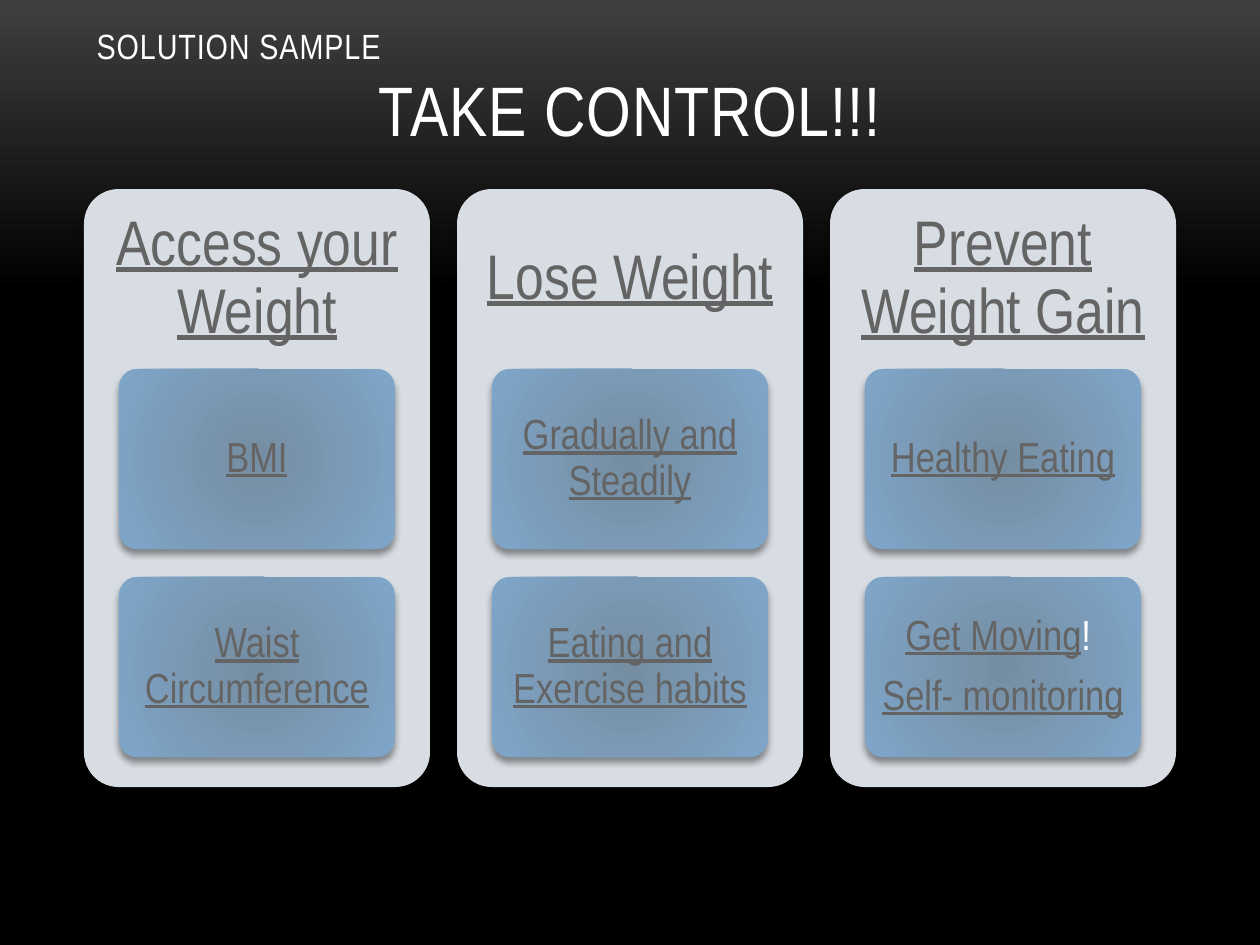
from lxml import etree
from pptx import Presentation
from pptx import util as u
from pptx.dml.color import RGBColor
from pptx.enum import shapes, text
from pptx.oxml import ns

PX = 914400 / 126
WHITE = RGBColor(0xFF, 0xFF, 0xFF)
BLACK = RGBColor(0, 0, 0)
CHARCOAL = RGBColor(0x3F, 0x3F, 0x3F)
GREY = RGBColor(0x64, 0x64, 0x64)
CARD = RGBColor(0xD8, 0xDD, 0xE3)
TILE_CENTRE = RGBColor(0x75, 0x8D, 0xA1)
TILE_EDGE = RGBColor(0x7F, 0xA6, 0xCA)
FONT = "Arial Narrow"
LINK = dict(name=FONT, underline=True)

COLUMNS = [
    ("Access your Weight", [["BMI"], ["Waist Circumference"]]),
    ("Lose Weight", [["Gradually and Steadily"], ["Eating and Exercise habits"]]),
    ("Prevent Weight Gain", [["Healthy Eating"], ["Get Moving", "Self- monitoring"]]),
]


def emu(*lengths):
    return [u.Emu(round(n * PX)) for n in lengths]


def apply(target, **values):
    for name, value in values.items():
        setattr(target, name, value)


def add_run(p, words, color, **font):
    r = p.add_run()
    r.text = words
    apply(r.font, **font)
    r.font.color.rgb = color
    return r


def set_gradient(fill, stops):
    fill.gradient()
    for stop, (position, color) in zip(fill.gradient_stops, stops):
        stop.position = position
        stop.color.rgb = color


def add_panel(s, x, y, w, h):
    sp = s.shapes.add_shape(shapes.MSO_SHAPE.ROUNDED_RECTANGLE, *emu(x, y, w, h))
    sp.adjustments[0] = 0.1
    sp.line.fill.background()
    sp.shadow.inherit = False
    effects = sp.element.spPr.find(ns.qn("a:effectLst"))
    shadow = etree.SubElement(effects, ns.qn("a:outerShdw"), blurRad="50800",
                              dist="43180", dir="5400000", rotWithShape="0")
    color = etree.SubElement(shadow, ns.qn("a:srgbClr"), val=str(BLACK))
    etree.SubElement(color, ns.qn("a:alpha"), val="40000")
    return sp


def write_centred(tf, lines, size, inset_x, inset_y):
    dx, dy = emu(inset_x, inset_y)
    apply(tf, word_wrap=True, vertical_anchor=text.MSO_ANCHOR.MIDDLE,
          margin_left=dx, margin_right=dx, margin_top=dy, margin_bottom=dy)
    for i, line in enumerate(lines):
        p = tf.add_paragraph() if i else tf.paragraphs[0]
        apply(p, alignment=text.PP_ALIGN.CENTER, line_spacing=0.9)
        if i:
            p.space_before = u.Pt(8.4)
        add_run(p, line, GREY, size=u.Pt(size), **LINK)


def add_tile(s, x, y, w, h, lines):
    sp = add_panel(s, x, y, w, h)
    set_gradient(sp.fill, [(0, TILE_CENTRE), (1, TILE_EDGE)])
    grad = sp.element.spPr.find(ns.qn("a:gradFill"))
    grad.remove(grad.find(ns.qn("a:lin")))
    circle = etree.SubElement(grad, ns.qn("a:path"), path="circle")
    etree.SubElement(circle, ns.qn("a:fillToRect"), {side: "100000" for side in "ltrb"})
    write_centred(sp.text_frame, lines, 24, 9, 6)
    return sp


def add_column(s, x, y, w, h, heading, tiles):
    sp = add_panel(s, x, y, w, h)
    sp.fill.solid()
    sp.fill.fore_color.rgb = CARD
    row, gap, side = 180, 28, 35
    box = s.shapes.add_textbox(*emu(x, y, w, row))
    write_centred(box.text_frame, [heading], 36, 19, 19)
    return [add_tile(s, x + side, y + row + i * (row + gap), w - 2 * side, row, lines)
            for i, lines in enumerate(tiles)]


def add_title(s, x, y, w, h):
    title = s.shapes.title
    apply(title, **dict(zip(("left", "top", "width", "height"), emu(x, y, w, h))))
    tf = title.text_frame
    apply(tf, word_wrap=True, auto_size=text.MSO_AUTO_SIZE.NONE,
          vertical_anchor=text.MSO_ANCHOR.BOTTOM)
    lines = [("SOLUTION SAMPLE", 20, text.PP_ALIGN.LEFT),
             ("TAKE CONTROL!!!", 40, text.PP_ALIGN.CENTER)]
    for i, (line, size, align) in enumerate(lines):
        p = tf.add_paragraph() if i else tf.paragraphs[0]
        apply(p, alignment=align, space_before=u.Pt(0))
        r = add_run(p, line, WHITE, name=FONT, size=u.Pt(size))
        r.font._element.set("spc", "50")


def main():
    prs = Presentation()
    prs.slide_width, prs.slide_height = emu(1260, 945)
    s = prs.slides.add_slide(prs.slide_layouts[5])
    set_gradient(s.background.fill, [(0, CHARCOAL), (0.31, BLACK)])
    s.background.fill.gradient_angle = 270
    add_title(s, 84, 38, 1092, 119)
    for i, (heading, tiles) in enumerate(COLUMNS):
        last_tile = add_column(s, 84 + i * 373, 189, 346, 598, heading, tiles)[-1]
    add_run(last_tile.text_frame.paragraphs[0], "! ", WHITE, name=FONT, size=u.Pt(24))
    prs.save("out.pptx")


if __name__ == "__main__":
    main()
